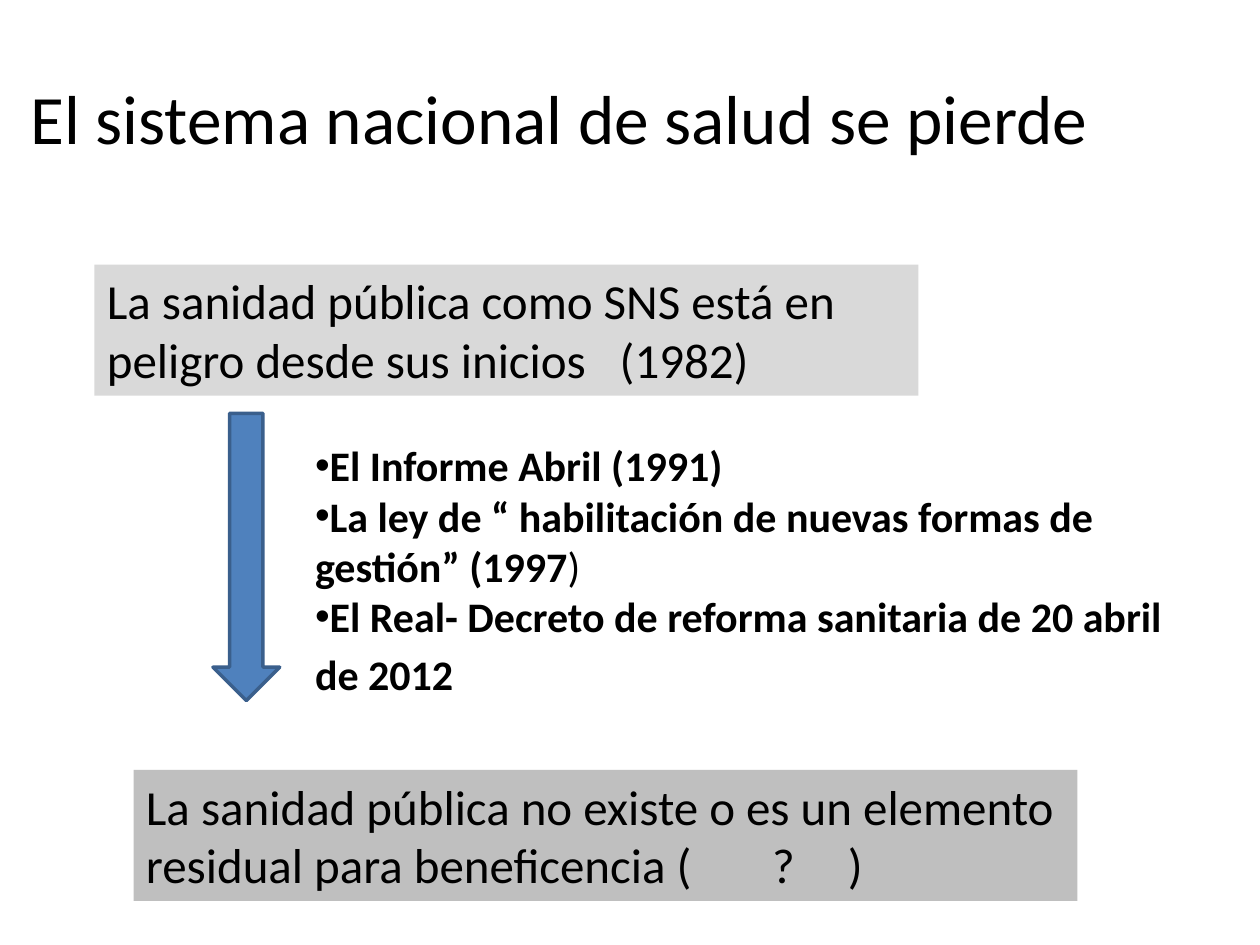
from dataclasses import dataclass

from lxml.etree import SubElement
from pptx import Presentation
from pptx.dml.color import RGBColor
from pptx.enum.shapes import MSO_SHAPE
from pptx.enum.text import MSO_ANCHOR, MSO_AUTO_SIZE, PP_ALIGN
from pptx.oxml.ns import qn
from pptx.util import Inches, Pt

BLACK = RGBColor(0x00, 0x00, 0x00)
LIGHT_GRAY = RGBColor(0xD9, 0xD9, 0xD9)
MID_GRAY = RGBColor(0xBF, 0xBF, 0xBF)
BLUE = RGBColor(0x4F, 0x81, 0xBD)
DARK_BLUE = RGBColor(0x3A, 0x5F, 0x8C)
FONT = "Calibri"


@dataclass
class Statement:
    box: tuple[float, float, float, float]
    fill: RGBColor
    lines: list[str]
    tabs: list[float]


STATEMENTS = [
    Statement((0.75, 2.1, 6.54, 1.04), LIGHT_GRAY,
              ["La sanidad pública como SNS está en peligro desde sus inicios\t(1982)"],
              [4.07]),
    Statement((1.06, 6.11, 7.49, 1.04), MID_GRAY,
              ["La sanidad pública no existe o es un elemento",
               "residual para beneficencia (\t?\t)"],
              [4.97, 5.57]),
]

# Each milestone is a list of (text, bold, size) runs
MILESTONES = [
    [("El Informe Abril (1991)", True, 24)],
    [("La ley de “ habilitación de nuevas formas de gestión” (1997", True, 24),
      (")", False, 24)],
    [("El Real- Decreto de reforma sanitaria de 20 abril de 2012", True, 24),
     (" ", True, 28)],
]


def add_text(paragraph, text: str, *, size: float, bold: bool = False,
             align=PP_ALIGN.LEFT) -> None:
    paragraph.alignment = align
    paragraph.space_before = Pt(0)
    run = paragraph.add_run()
    run.text = text
    run.font.name = FONT
    run.font.size = Pt(size)
    run.font.bold = bold
    run.font.color.rgb = BLACK


def next_paragraph(frame, index: int):
    return frame.paragraphs[0] if index == 0 else frame.add_paragraph()


def place(shape, left: float, top: float, width: float, height: float) -> None:
    shape.left, shape.top = Inches(left), Inches(top)
    shape.width, shape.height = Inches(width), Inches(height)


def set_tabs(paragraph, positions: list[float]) -> None:
    tab_list = SubElement(paragraph._p.get_or_add_pPr(), qn("a:tabLst"))
    for position in positions:
        SubElement(tab_list, qn("a:tab"), pos=str(Inches(position)), algn="l")


def set_bullet(paragraph) -> None:
    properties = paragraph._p.get_or_add_pPr()
    properties.set("marL", "0")
    properties.set("indent", "0")
    SubElement(properties, qn("a:buFont"), typeface="Arial")
    SubElement(properties, qn("a:buChar"), char="•")


def add_block(slide, kind, box: tuple[float, float, float, float], fill: RGBColor):
    shape = slide.shapes.add_shape(kind, *map(Inches, box))
    shape.shadow.inherit = False
    shape.fill.solid()
    shape.fill.fore_color.rgb = fill
    shape.line.fill.background()
    return shape


def add_statement(slide, statement: Statement) -> None:
    frame = add_block(slide, MSO_SHAPE.RECTANGLE, statement.box, statement.fill).text_frame
    frame.word_wrap = True
    frame.vertical_anchor = MSO_ANCHOR.TOP
    for index, line in enumerate(statement.lines):
        paragraph = next_paragraph(frame, index)
        add_text(paragraph, line, size=28)
        if "\t" in line:
            set_tabs(paragraph, statement.tabs)


def main() -> None:
    presentation = Presentation()
    presentation.slide_width, presentation.slide_height = Inches(10), Inches(7.5)
    slide = presentation.slides.add_slide(presentation.slide_layouts[1])

    # Title
    title = slide.shapes.title
    place(title, 0, 0.3, 9, 1.25)
    title.text_frame.auto_size = MSO_AUTO_SIZE.NONE
    title.text_frame.vertical_anchor = MSO_ANCHOR.MIDDLE
    add_text(title.text_frame.paragraphs[0], "El sistema nacional de salud se pierde ",
             size=39.6, align=PP_ALIGN.CENTER)

    # Starting point and outcome
    for statement in STATEMENTS:
        add_statement(slide, statement)

    # Arrow from one to the other
    arrow = add_block(slide, MSO_SHAPE.DOWN_ARROW, (1.69, 3.28, 0.53, 2.28), BLUE)
    arrow.line.color.rgb = DARK_BLUE
    arrow.line.width = Pt(2)

    # Milestones beside the arrow
    body = slide.placeholders[1]
    place(body, 2.4, 3.44, 7.24, 2.49)
    body.text_frame.auto_size = MSO_AUTO_SIZE.NONE
    body.text_frame.vertical_anchor = MSO_ANCHOR.TOP
    for index, runs in enumerate(MILESTONES):
        paragraph = next_paragraph(body.text_frame, index)
        for text, bold, size in runs:
            add_text(paragraph, text, size=size, bold=bold)
        set_bullet(paragraph)

    presentation.save("out.pptx")


if __name__ == "__main__":
    main()
